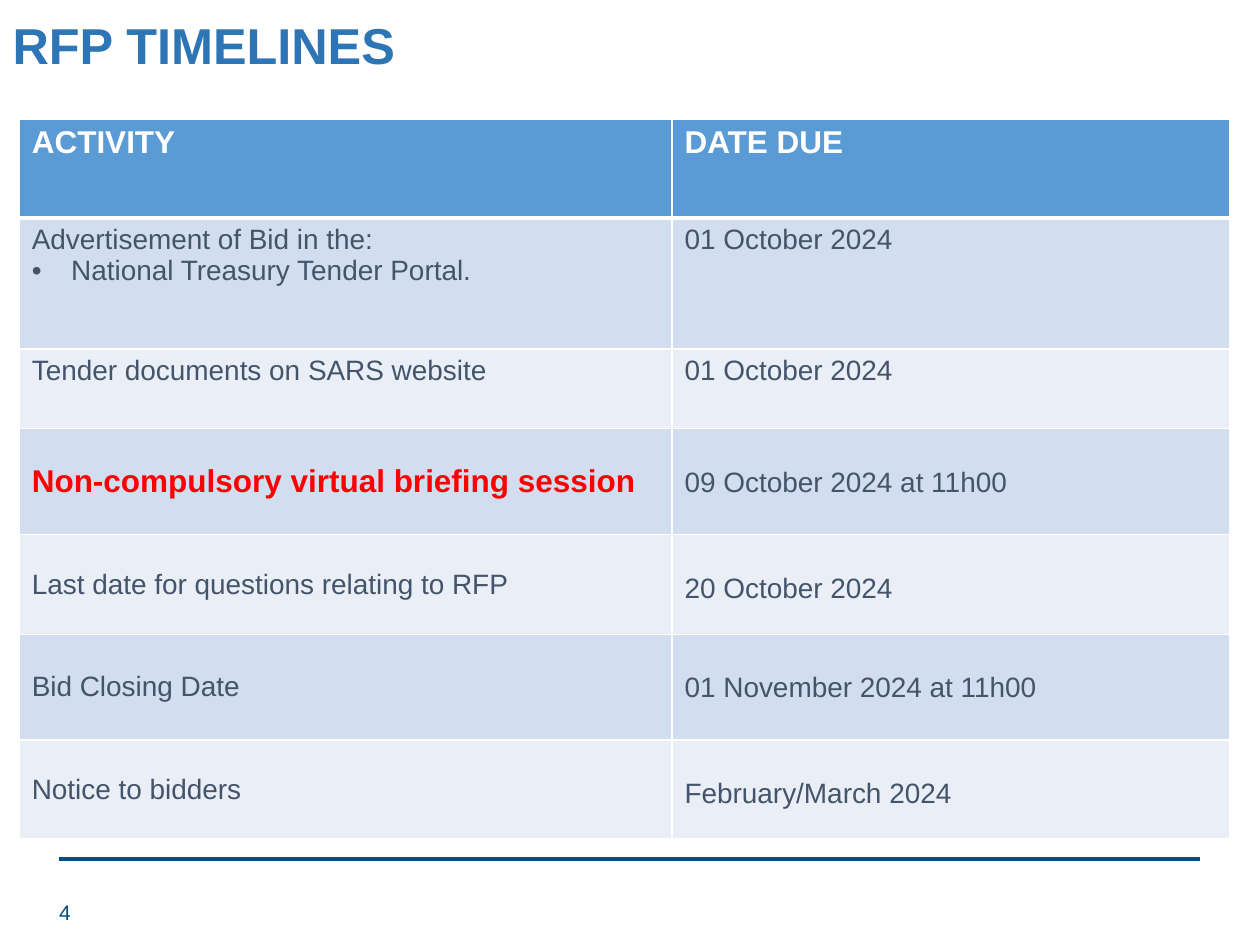
import pptx
import pptx.util
import pptx.dml.color
import pptx.enum.text
import pptx.enum.shapes
import pptx.oxml.ns
from lxml import etree

Pt = pptx.util.Pt
RGBColor = pptx.dml.color.RGBColor
ANCHOR = pptx.enum.text.MSO_ANCHOR

WHITE = RGBColor(0xFF, 0xFF, 0xFF)
TITLE_BLUE = RGBColor(0x2E, 0x75, 0xB6)
NAVY = RGBColor(0x00, 0x4C, 0x85)
HEADER_BLUE = RGBColor(0x5B, 0x9B, 0xD5)
BANDS = (RGBColor(0xD2, 0xDE, 0xEF), RGBColor(0xEA, 0xEF, 0xF7))
SLATE = RGBColor(0x44, 0x54, 0x6A)
RED = RGBColor(0xFF, 0x00, 0x00)
FONT = "Arial"

TITLE = "RFP TIMELINES"
PAGE_NUMBER = "4"
HEADER = ("ACTIVITY", "DATE DUE")
HIGHLIGHT = "Non-compulsory virtual briefing session"
TIMELINE = [
    ("Advertisement of Bid in the:\nNational Treasury Tender Portal.", "01 October 2024"),
    ("Tender documents on SARS website", "01 October 2024"),
    (HIGHLIGHT, "09 October 2024 at 11h00"),
    ("Last date for questions relating to RFP", "20 October 2024"),
    ("Bid Closing Date", "01 November 2024 at 11h00"),
    ("Notice to bidders", "February/March 2024"),
]
COLUMN_WIDTHS = (373, 319)
ROW_HEIGHTS = (56.5, 75, 45.5, 60.5, 57, 60.5, 56.5)
FIRST_LOWERED_ROW = 3
LOWERED_MARGIN = 22


def style_text(text_frame, size, color, bold=False):
    for paragraph in text_frame.paragraphs:
        for run in paragraph.runs:
            run.font.name = FONT
            run.font.size = Pt(size)
            run.font.bold = bold
            run.font.color.rgb = color


def add_bullet(paragraph, indent):
    properties = paragraph._p.get_or_add_pPr()
    properties.set("marL", str(Pt(indent)))
    properties.set("indent", str(-Pt(indent)))
    etree.SubElement(properties, pptx.oxml.ns.qn("a:buFont"), typeface=FONT)
    etree.SubElement(properties, pptx.oxml.ns.qn("a:buChar"), char="•")


def set_borders(cell, widths):
    """Draw white borders; widths are left, right, top, bottom."""
    properties = cell._tc.get_or_add_tcPr()
    for position, (side, width) in enumerate(zip("LRTB", widths)):
        line = etree.Element(pptx.oxml.ns.qn("a:ln" + side), w=str(Pt(width)))
        fill = etree.SubElement(line, pptx.oxml.ns.qn("a:solidFill"))
        etree.SubElement(fill, pptx.oxml.ns.qn("a:srgbClr"), val=str(WHITE))
        properties.insert(position, line)


def add_title(slide):
    title = slide.shapes.title
    title.left, title.top, title.width, title.height = Pt(0), Pt(8.5), Pt(620.5), Pt(42)
    text_frame = title.text_frame
    text_frame.text = TITLE
    text_frame.vertical_anchor = ANCHOR.TOP
    text_frame.auto_size = pptx.enum.text.MSO_AUTO_SIZE.NONE
    paragraph = text_frame.paragraphs[0]
    paragraph.alignment = pptx.enum.text.PP_ALIGN.LEFT
    paragraph.line_spacing = 0.9
    style_text(text_frame, 28.8, TITLE_BLUE, bold=True)


def add_footer(slide):
    rule = slide.shapes.add_connector(
        pptx.enum.shapes.MSO_CONNECTOR.STRAIGHT, Pt(34), Pt(491), Pt(686), Pt(491))
    rule.line.color.rgb = NAVY
    rule.line.width = Pt(2)
    etree.SubElement(rule._element.spPr, pptx.oxml.ns.qn("a:effectLst"))

    number = slide.shapes.add_textbox(Pt(26.7), Pt(506.5), Pt(162), Pt(29))
    number.text_frame.word_wrap = True
    number.text_frame.vertical_anchor = ANCHOR.MIDDLE
    number.text_frame.text = PAGE_NUMBER
    style_text(number.text_frame, 12, NAVY)


def add_timeline(slide):
    rows = [HEADER] + TIMELINE
    table = slide.shapes.add_table(
        len(rows), len(HEADER), Pt(11), Pt(68),
        Pt(sum(COLUMN_WIDTHS)), Pt(sum(ROW_HEIGHTS))).table
    for column, width in zip(table.columns, COLUMN_WIDTHS):
        column.width = Pt(width)
    for row, height in zip(table.rows, ROW_HEIGHTS):
        row.height = Pt(height)

    for row_index, texts in enumerate(rows):
        is_header = row_index == 0
        for column_index, text in enumerate(texts):
            cell = table.cell(row_index, column_index)
            cell.text_frame.text = text
            cell.fill.solid()
            cell.fill.fore_color.rgb = HEADER_BLUE if is_header else BANDS[(row_index - 1) % 2]
            set_borders(cell, (1, 1, 3 if row_index == 1 else 1, 3 if is_header else 1))
            if row_index >= FIRST_LOWERED_ROW:
                if column_index == 0:
                    cell.vertical_anchor = ANCHOR.MIDDLE
                else:
                    cell.margin_top = Pt(LOWERED_MARGIN)
            for paragraph in cell.text_frame.paragraphs[1:]:
                add_bullet(paragraph, 22.5)
            if is_header:
                style_text(cell.text_frame, 18, WHITE, bold=True)
            elif text == HIGHLIGHT:
                style_text(cell.text_frame, 18, RED, bold=True)
            else:
                style_text(cell.text_frame, 16, SLATE)


def main():
    presentation = pptx.Presentation()
    presentation.slide_width, presentation.slide_height = Pt(720), Pt(540)
    slide = presentation.slides.add_slide(presentation.slide_layouts[5])
    add_title(slide)
    add_footer(slide)
    add_timeline(slide)
    presentation.save("out.pptx")


if __name__ == "__main__":
    main()
